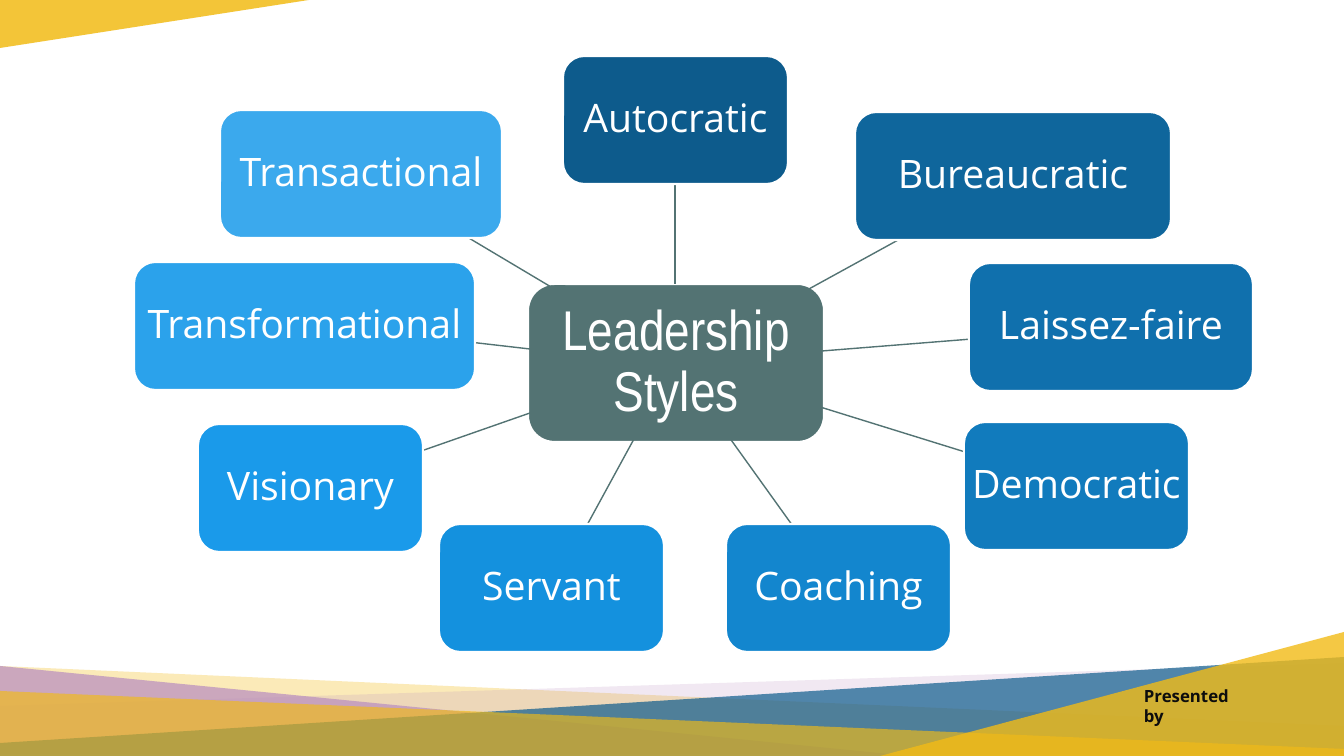
from lxml.etree import SubElement
from pptx import Presentation
from pptx.dml.color import RGBColor
from pptx.enum.shapes import MSO_CONNECTOR as Connector, MSO_SHAPE as Shape
from pptx.enum.text import MSO_ANCHOR as Anchor, PP_ALIGN as Align
from pptx.oxml.ns import qn
from pptx.util import Emu, Pt

WIDTH, HEIGHT = 1344, 756
SCALE = 12192000 / WIDTH
NODE_HEIGHT = 128

BANDS = [
    ("F2BB16", 30, [(1344, 726), (1344, 754), (0, 754), (0, 666)]),
    ("B98EBF", 20, [(1344, 663), (1344, 754), (0, 754), (0, 706)]),
    ("B98EBF", 72, [(0, 666), (909, 756), (0, 756)]),
    ("0D5B8C", 70, [(1344, 657), (1344, 756), (0, 756), (0, 743)]),
    ("F2BB16", 65, [(0, 691), (0, 756), (1344, 756), (1344, 749)]),
    ("F2BB16", 80, [(880, 756), (1344, 632), (1344, 756)]),
    ("F2BB16", 85, [(0, 0), (309, 0), (0, 48)]),
]

LEADERSHIP_STYLES = [
    ("Autocratic", "0D5B8C", (563, 56, 225), (675, 284, 675, 183)),
    ("Bureaucratic", "0F669C", (855, 112, 316), (778, 306, 920, 228)),
    ("Laissez-faire", "1070AD", (969, 263, 284), (822, 351, 972, 339)),
    ("Democratic", "117BBD", (964, 422, 225), (804, 402, 978, 456)),
    ("Coaching", "1386CE", (726, 524, 225), (729, 437, 795, 529)),
    ("Servant", "1491DE", (439, 524, 225), (634, 439, 586, 527)),
    ("Visionary", "1A9AEA", (198, 424, 225), (550, 406, 407, 456)),
    ("Transformational", "2BA2EB", (134, 262, 341), (530, 349, 469, 342)),
    ("Transactional", "3BA9ED", (220, 110, 282), (578, 303, 447, 225)),
]


def px(*lengths):
    return [Emu(round(length * SCALE)) for length in lengths]


def color(value):
    return RGBColor.from_string(value)


def write(shape, text, font, size, ink, bold=False, align=Align.LEFT,
          anchor=Anchor.TOP, insets=(10, 5), spacing=1.0):
    frame = shape.text_frame
    frame.word_wrap = True
    frame.vertical_anchor = anchor
    side, edge = px(*insets)
    frame.margin_left = frame.margin_right = side
    frame.margin_top = frame.margin_bottom = edge
    para = frame.paragraphs[0]
    para.alignment = align
    para.line_spacing = spacing
    span = para.add_run()
    span.text = text
    span.font.name = font
    span.font.size = Pt(size)
    span.font.bold = bold
    span.font.color.rgb = color(ink)


class MindMap:
    body_font = "Open Sans"
    hub_font = "Arial Narrow"
    white = "FFFFFF"
    ink = "0D0D0D"
    slate = "537373"

    def __init__(self, page):
        self.shapes = page.shapes

    def band(self, fill, opacity, points):
        builder = self.shapes.build_freeform(*points[0], scale=SCALE)
        builder.add_line_segments(points[1:], close=True)
        shape = builder.convert_to_shape()
        shape.fill.solid()
        shape.fill.fore_color.rgb = color(fill)
        shape.line.fill.background()
        shape.shadow.inherit = False
        tint = shape._element.spPr.find(qn("a:solidFill")).find(qn("a:srgbClr"))
        SubElement(tint, qn("a:alpha"), val=str(opacity * 1000))

    def spoke(self, ends):
        line = self.shapes.add_connector(Connector.STRAIGHT, *px(*ends))
        line.line.color.rgb = color(self.slate)
        line.line.width = Pt(1)
        SubElement(line._element.spPr, qn("a:effectLst"))

    def node(self, text, fill, place, font=body_font, size=28):
        box = self.shapes.add_shape(Shape.ROUNDED_RECTANGLE, *px(*place))
        box.fill.solid()
        box.fill.fore_color.rgb = color(fill)
        box.line.color.rgb = color(self.white)
        box.line.width = Pt(1.5)
        box.shadow.inherit = False
        write(box, text, font, size, self.white, align=Align.CENTER,
              anchor=Anchor.MIDDLE, insets=(0, 0), spacing=0.9)

    def caption(self, text, place):
        box = self.shapes.add_textbox(*px(*place))
        write(box, text, self.body_font, 12, self.ink, bold=True)


def main():
    deck = Presentation()
    deck.slide_width, deck.slide_height = px(WIDTH, HEIGHT)
    page = deck.slides.add_slide(deck.slide_layouts[6])
    mind_map = MindMap(page)
    for fill, opacity, points in BANDS:
        mind_map.band(fill, opacity, points)
    mind_map.caption("Presented by", (1134, 681, 123, 28))
    mind_map.node("Leadership Styles", mind_map.slate, (528, 284, 296, 158),
                  font=mind_map.hub_font, size=40)
    for name, fill, place, ends in LEADERSHIP_STYLES:
        mind_map.spoke(ends)
        mind_map.node(name, fill, (*place, NODE_HEIGHT))
    deck.save("out.pptx")


if __name__ == "__main__":
    main()
